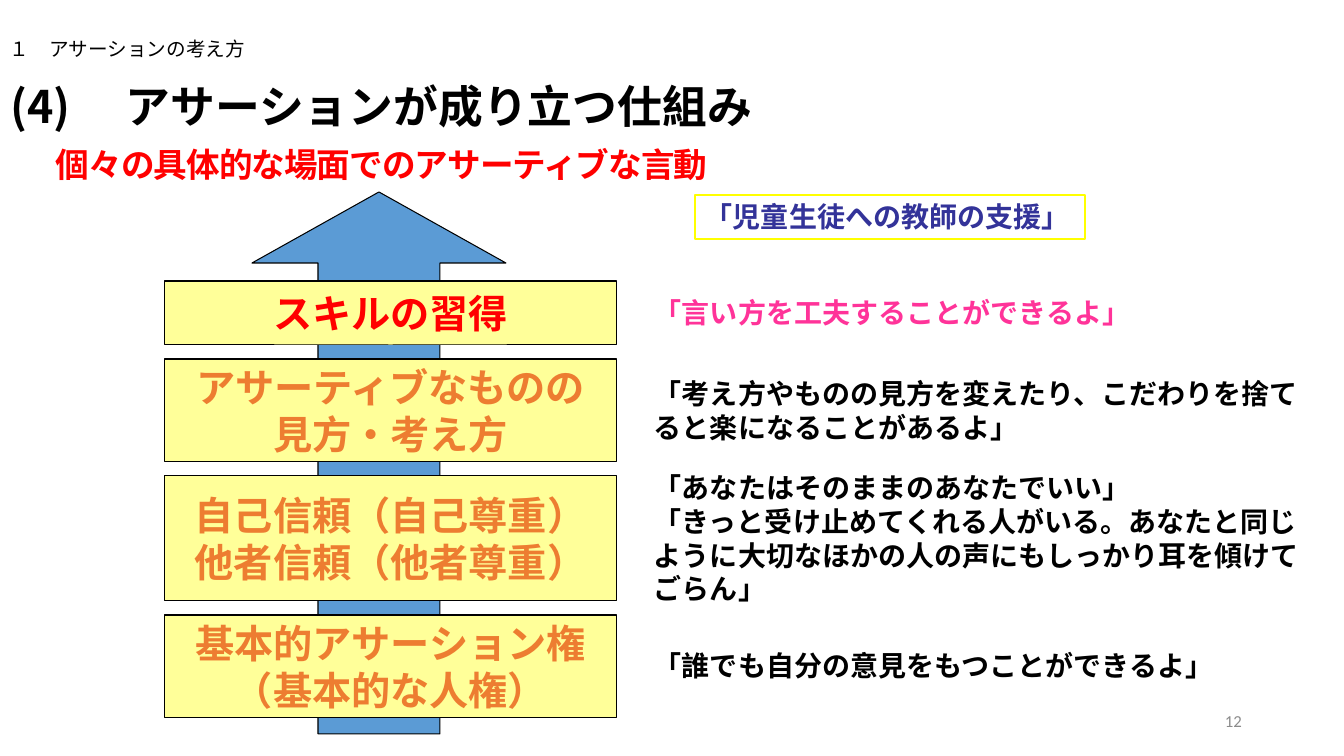
"""Build the slide on how assertion comes about."""
import lxml.etree
import pptx
import pptx.dml.color
import pptx.enum.shapes
import pptx.enum.text
import pptx.oxml.ns
import pptx.util

RGBColor = pptx.dml.color.RGBColor
ALIGN = pptx.enum.text.PP_ALIGN
ANCHOR = pptx.enum.text.MSO_ANCHOR
PRESET = pptx.enum.shapes.MSO_SHAPE

BLACK = RGBColor(0x00, 0x00, 0x00)
WHITE = RGBColor(0xFF, 0xFF, 0xFF)
RED = RGBColor(0xFF, 0x00, 0x00)
ORANGE = RGBColor(0xED, 0x7D, 0x31)
PINK = RGBColor(0xFF, 0x33, 0x99)
NAVY = RGBColor(0x33, 0x33, 0x99)
GRAY = RGBColor(0x8C, 0x8C, 0x8C)
BLUE = RGBColor(0x5B, 0x9B, 0xD5)
CREAM = RGBColor(0xFF, 0xFF, 0x99)
YELLOW = RGBColor(0xFF, 0xFF, 0x00)

JAPANESE = "Noto Sans CJK JP"
LATIN = "Calibri"
EMU_PER_PX = 914400 / 100.8
SLIDE_SIZE = (1344, 756)

SECTION = "１　アサーションの考え方"
TITLE = "(4)　 アサーションが成り立つ仕組み"
OUTCOME = "個々の具体的な場面でのアサーティブな言動"
SUPPORT = "「児童生徒への教師の支援」"
PAGE_NUMBER = "12"

ARROWS = [(369, 365, 0.21), (192, 209, 0.34)]
ARROW_LEFT, ARROW_WIDTH, SHAFT_RATIO = 252, 254, 0.48

STEP_LEFT, STEP_TOP, STEP_WIDTH, STEP_GAP = 164, 281, 453, 14
STEPS = [
    (64, RED, ["スキルの習得"]),
    (103, ORANGE, ["アサーティブなものの", "見方・考え方"]),
    (125, ORANGE, ["自己信頼（自己尊重）", "他者信頼（他者尊重）"]),
    (103, ORANGE, ["基本的アサーション権", "（基本的な人権）"]),
]

MESSAGE_LEFT, MESSAGE_WIDTH = 644, 682
MESSAGES = [
    (291, 44, PINK, ["「言い方を工夫することができるよ」"]),
    (372, 78, BLACK, ["「考え方やものの見方を変えたり、こだわりを捨てると楽になることがあるよ」"]),
    (466, 146, BLACK, [
        "「あなたはそのままのあなたでいい」",
        "「きっと受け止めてくれる人がいる。あなたと同じように大切なほかの人の声にもしっかり耳を傾けてごらん」",
    ]),
    (644, 44, BLACK, ["「誰でも自分の意見をもつことができるよ」"]),
]


def px(*lengths):
    return [pptx.util.Emu(round(length * EMU_PER_PX)) for length in lengths]


def write(shape, lines, size, color, bold=True, align=ALIGN.LEFT,
          anchor=ANCHOR.TOP, wrap=True, font=JAPANESE):
    frame = shape.text_frame
    frame.word_wrap = wrap
    frame.vertical_anchor = anchor
    frame.auto_size = pptx.enum.text.MSO_AUTO_SIZE.NONE
    frame.margin_left = frame.margin_right = pptx.util.Inches(0.1)
    frame.margin_top = frame.margin_bottom = pptx.util.Inches(0.05)
    for index, line in enumerate(lines):
        paragraph = frame.add_paragraph() if index else frame.paragraphs[0]
        paragraph.alignment = align
        run = paragraph.add_run()
        run.text = line
        run.font.size = pptx.util.Pt(size)
        run.font.bold = bold
        run.font.name = font
        run.font.color.rgb = color
        east_asian = lxml.etree.SubElement(
            run.font._element, pptx.oxml.ns.qn("a:ea"))
        east_asian.set("typeface", font)


def add_text(slide, box, lines, size, color, **options):
    shape = slide.shapes.add_textbox(*px(*box))
    write(shape, lines, size, color, **options)
    return shape


def add_filled(slide, preset, box, fill, line, line_width):
    shape = slide.shapes.add_shape(preset, *px(*box))
    shape.shadow.inherit = False
    shape.fill.solid()
    shape.fill.fore_color.rgb = fill
    shape.line.color.rgb = line
    shape.line.width = pptx.util.Pt(line_width)
    return shape


def add_diagram(slide):
    for top, height, head_ratio in ARROWS:
        arrow = add_filled(slide, PRESET.UP_ARROW,
                           (ARROW_LEFT, top, ARROW_WIDTH, height),
                           BLUE, BLACK, 0.75)
        arrow.adjustments[0] = SHAFT_RATIO
        arrow.adjustments[1] = head_ratio
    top = STEP_TOP
    for height, color, lines in STEPS:
        step = add_filled(slide, PRESET.RECTANGLE,
                          (STEP_LEFT, top, STEP_WIDTH, height),
                          CREAM, BLACK, 0.75)
        write(step, lines, 28, color, align=ALIGN.CENTER,
              anchor=ANCHOR.MIDDLE, wrap=False)
        top += height + STEP_GAP


def add_messages(slide):
    for top, height, color, lines in MESSAGES:
        add_text(slide, (MESSAGE_LEFT, top, MESSAGE_WIDTH, height),
                 lines, 20, color)
    support = add_filled(slide, PRESET.RECTANGLE, (695, 195, 390, 44),
                         WHITE, YELLOW, 2)
    write(support, [SUPPORT], 20, NAVY, wrap=False)


def add_headings(slide):
    title = slide.shapes.title
    title.left, title.top, title.width, title.height = px(0, 74, 867, 64)
    write(title, [TITLE], 32, BLACK)
    add_text(slide, (0, 32, 507, 34), [SECTION], 14, BLACK, bold=False)
    outcome = add_text(slide, (46, 150, 690, 40), [OUTCOME], 24, RED)
    paragraph = outcome.text_frame.paragraphs[0]
    paragraph.line_spacing = pptx.util.Pt(21)
    paragraph.runs[0].font._element.set("spc", "-70")
    add_text(slide, (950, 701, 302, 40), [PAGE_NUMBER], 12, GRAY, bold=False,
             align=ALIGN.RIGHT, anchor=ANCHOR.MIDDLE, font=LATIN)


def main():
    presentation = pptx.Presentation()
    presentation.slide_width, presentation.slide_height = px(*SLIDE_SIZE)
    slide = presentation.slides.add_slide(presentation.slide_layouts[5])
    add_diagram(slide)
    add_messages(slide)
    add_headings(slide)
    presentation.save("out.pptx")


if __name__ == "__main__":
    main()
